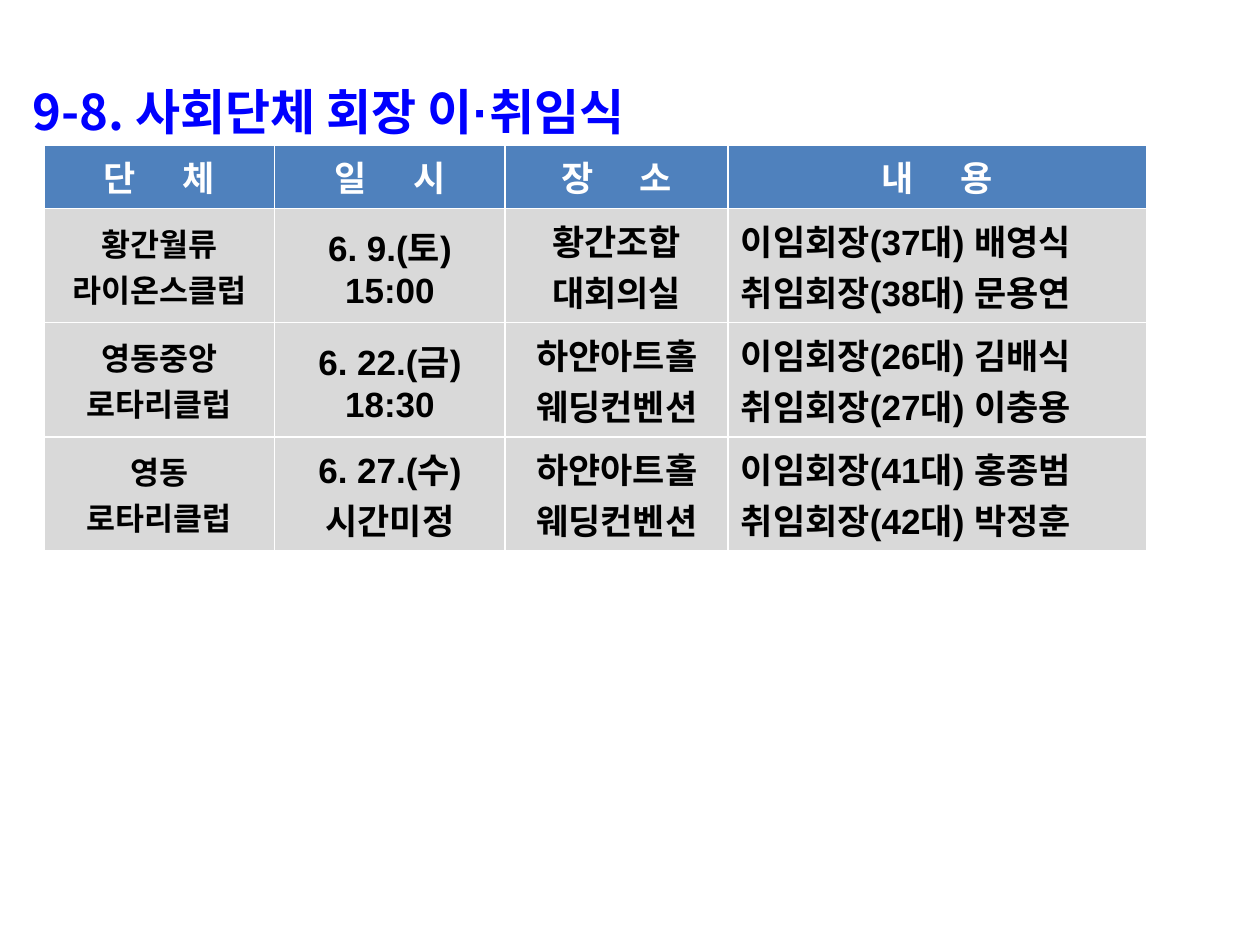
from pptx import Presentation
from pptx.dml.color import RGBColor
from pptx.enum.text import MSO_ANCHOR as Anchor, PP_ALIGN as Align
from pptx.oxml.ns import qn
from pptx.util import Inches, Pt
from lxml.etree import SubElement

BLUE = RGBColor(0x00, 0x00, 0xFF)
HEADER_FILL = RGBColor(0x4F, 0x81, 0xBD)
BODY_FILL = RGBColor(0xD9, 0xD9, 0xD9)
WHITE = RGBColor(0xFF, 0xFF, 0xFF)
BLACK = RGBColor(0x00, 0x00, 0x00)
KOREAN, LATIN = "Noto Sans CJK KR", "Arial"

TITLE = [("9-8. 사회단체 회장 이", KOREAN), ("·", LATIN), ("취임식", KOREAN)]
HEADERS = ["단 체", "일 시", "장 소", "내 용"]
CEREMONIES = [
    ("황간월류\n라이온스클럽", "6. 9.(토)\n15:00", "황간조합\n대회의실",
     "이임회장(37대) 배영식\n취임회장(38대) 문용연"),
    ("영동중앙\n로타리클럽", "6. 22.(금)\n18:30", "하얀아트홀\n웨딩컨벤션",
     "이임회장(26대) 김배식\n취임회장(27대) 이충용"),
    ("영동\n로타리클럽", "6. 27.(수)\n시간미정", "하얀아트홀\n웨딩컨벤션",
     "이임회장(41대) 홍종범\n취임회장(42대) 박정훈"),
]
COLUMN_WIDTHS = [1.83, 1.83, 1.77, 3.32]
COLUMN_SIZES = [18, 20, 20, 20]
COLUMN_ALIGNS = [Align.CENTER] * 3 + [Align.LEFT]
HEADER_HEIGHT, BODY_HEIGHT = 0.39, 0.68
HEADER_TRACKING = 1100  # hundredths of a point


def style_cell(cell, fill, color, size, align):
    cell.fill.solid()
    cell.fill.fore_color.rgb = fill
    cell.vertical_anchor = Anchor.MIDDLE
    for para in cell.text_frame.paragraphs:
        para.alignment = align
        font = para.font
        font.name, font.size, font.bold = LATIN, Pt(size), True
        font.color.rgb = color


deck = Presentation()
deck.slide_width, deck.slide_height = Inches(10), Inches(7.5)
page = deck.slides.add_slide(deck.slide_layouts[5])

# Title
title = page.shapes.title
title.left, title.top = Inches(0.16), Inches(0.36)
title.width, title.height = Inches(9.84), Inches(3.78)
frame = title.text_frame
frame.word_wrap = True
frame.vertical_anchor = Anchor.TOP
para = frame.paragraphs[0]
para.alignment = Align.LEFT
para.line_spacing = 1.5
para.font.size, para.font.bold = Pt(28), True
para.font.color.rgb = BLUE
for text, typeface in TITLE:
    span = para.add_run()
    span.text = text
    span.font.name = typeface
    SubElement(span.font._element, qn("a:ea"), typeface=KOREAN)

# Table of ceremonies
table = page.shapes.add_table(
    len(CEREMONIES) + 1, len(HEADERS), Inches(0.35), Inches(1.15),
    Inches(sum(COLUMN_WIDTHS)),
    Inches(HEADER_HEIGHT + BODY_HEIGHT * len(CEREMONIES))).table
table.horz_banding = False
for column, width in zip(table.columns, COLUMN_WIDTHS):
    column.width = Inches(width)
for index, row in enumerate(table.rows):
    row.height = Inches(BODY_HEIGHT if index else HEADER_HEIGHT)

# Header row, with its two syllables spread by letter spacing
for cell, label in zip(table.rows[0].cells, HEADERS):
    para = cell.text_frame.paragraphs[0]
    lead, tail = para.add_run(), para.add_run()
    lead.text, tail.text = label[:-1], label[-1]
    lead.font._element.set("spc", str(HEADER_TRACKING))
    style_cell(cell, HEADER_FILL, WHITE, 20, Align.CENTER)

# Body rows
for row, ceremony in zip(list(table.rows)[1:], CEREMONIES):
    for cell, text, size, align in zip(row.cells, ceremony, COLUMN_SIZES, COLUMN_ALIGNS):
        cell.text = text
        style_cell(cell, BODY_FILL, BLACK, size, align)

deck.save("out.pptx")
